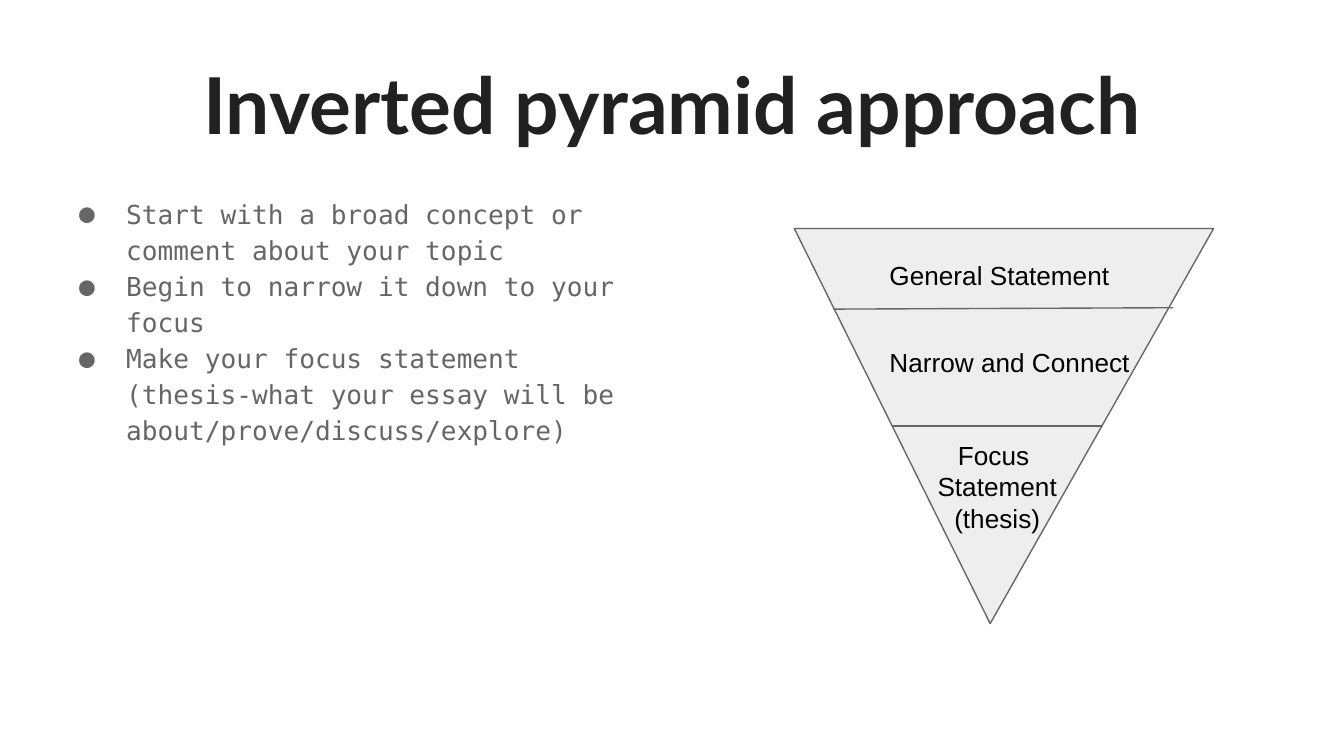
"""Builds the inverted pyramid slide."""
from lxml import etree
from pptx import Presentation
from pptx.dml.color import RGBColor
from pptx.enum import shapes, text
from pptx.oxml.ns import qn
from pptx.util import Inches, Pt

GREY = "666666"
MONO = "DejaVu Sans Mono"


def rgb(value):
    """Turn a hex string into a colour."""
    return RGBColor.from_string(value)


def add_text(s, box, lines, size, font, color, bold=False, align=text.PP_ALIGN.LEFT):
    """Add a wrapped text box with one paragraph per line."""
    tf = s.shapes.add_textbox(*map(Inches, box)).text_frame
    tf.word_wrap = True
    tf.margin_left = tf.margin_right = tf.margin_top = tf.margin_bottom = Inches(0.1)
    for i, line in enumerate(lines):
        p = tf.add_paragraph() if i else tf.paragraphs[0]
        p.alignment = align
        r = p.add_run()
        r.text = line
        r.font.size, r.font.name, r.font.bold = Pt(size), font, bold
        r.font.color.rgb = rgb(color)
    return tf


def add_bullets(tf, color, font):
    """Give every paragraph a round bullet and a hanging indent."""
    for p in tf.paragraphs:
        p.line_spacing = 1.15
        pPr = p._p.get_or_add_pPr()
        pPr.set("marL", str(Inches(0.5)))
        pPr.set("indent", str(Inches(-0.35)))
        clr = etree.SubElement(pPr, qn("a:buClr"))
        etree.SubElement(clr, qn("a:srgbClr"), val=color)
        etree.SubElement(pPr, qn("a:buFont"), typeface=font)
        etree.SubElement(pPr, qn("a:buChar"), char="●")


def add_triangle(s, box, apex):
    """Add a triangle that points down."""
    sp = s.shapes.add_shape(shapes.MSO_SHAPE.ISOSCELES_TRIANGLE, *map(Inches, box))
    sp.rotation = 180
    sp.adjustments[0] = 1 - apex
    sp.shadow.inherit = False
    sp.fill.solid()
    sp.fill.fore_color.rgb = rgb("EEEEEE")
    sp.line.color.rgb = rgb(GREY)
    sp.line.width = Pt(0.75)


def add_divider(s, ends):
    """Add a thin straight line."""
    sp = s.shapes.add_connector(shapes.MSO_CONNECTOR.STRAIGHT, *map(Inches, ends))
    sp.line.color.rgb = rgb(GREY)
    sp.line.width = Pt(0.75)
    etree.SubElement(sp._element.spPr, qn("a:effectLst"))


def main():
    """Build and save the slide."""
    prs = Presentation()
    prs.slide_width, prs.slide_height = Inches(10), Inches(5.625)
    s = prs.slides.add_slide(prs.slide_layouts[6])
    left, center = text.PP_ALIGN.LEFT, text.PP_ALIGN.CENTER

    add_text(s, (0.34, 0.32, 9.32, 0.88), ["Inverted pyramid approach"],
             42, "Lato", "212121", True, center)
    steps = ["Start with a broad concept or comment about your topic",
             "Begin to narrow it down to your focus",
             "Make your focus statement (thesis-what your essay will be "
             "about/prove/discuss/explore)"]
    tf = add_text(s, (0.34, 1.34, 4.37, 3.65), steps, 14, MONO, GREY)
    add_bullets(tf, GREY, MONO)

    add_triangle(s, (5.91, 1.7, 3.12, 2.94), 0.467)
    for ends in ((6.2, 2.3, 8.73, 2.29), (6.64, 3.17, 8.2, 3.17)):
        add_divider(s, ends)
    labels = [((6.52, 1.83, 1.9, 0.93), ["General Statement"], left),
              ((6.52, 2.48, 2.54, 0.93), ["Narrow and Connect"], left),
              ((6.78, 3.17, 1.28, 0.93), ["Focus ", "Statement", "(thesis)"], center)]
    for box, lines, align in labels:
        add_text(s, box, lines, 14, "Arial", "000000", align=align)

    prs.save("out.pptx")


if __name__ == "__main__":
    main()
